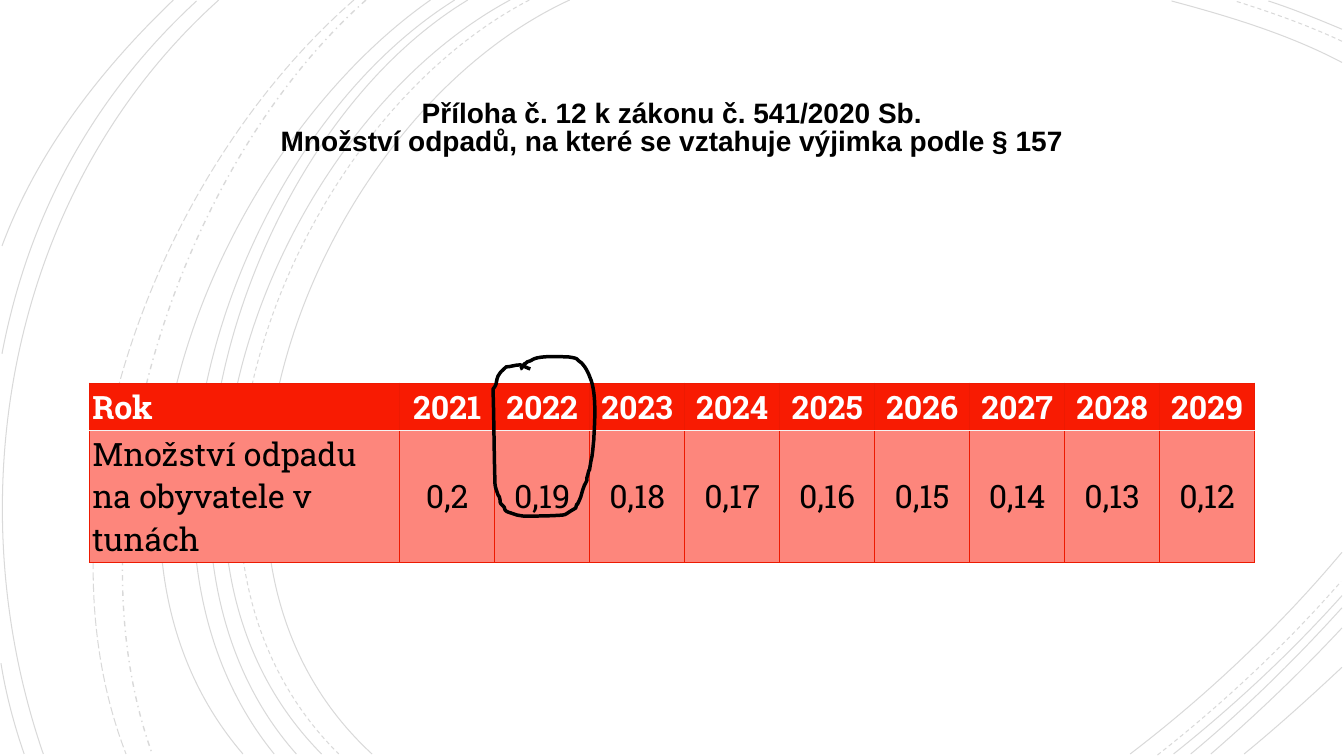
from lxml import etree
from pptx import Presentation
from pptx import util as u
from pptx.dml.color import RGBColor
from pptx.enum import dml, text
from pptx.oxml.ns import qn

# All lengths are cells of a grid of 1333 columns by 750 rows
CELL = u.Inches(0.01)
COLS, ROWS = 1333, 750

BLACK, WHITE = "000000", "FFFFFF"
RED, DARK_RED, LIGHT_RED, PALE = "F81B02", "ED1A02", "FD867C", "F4F4F4"

# Each arc: start, two control points, end
SOLID_ARCS = [
    (565, 0, 315, 115, 143, 540, 369, 748),
    (506, 0, 270, 127, 110, 537, 319, 748),
    (464, 0, 244, 133, 110, 541, 294, 748),
    (451, 0, 231, 138, 97, 533, 272, 748),
    (427, 0, 217, 147, 53, 529, 241, 748),
    (217, 0, 11, 185, -46, 490, 43, 748),
    (195, 1, 92, 96, 28, 214, 2, 351),
    (172, 0, 100, 69, 37, 150, 2, 244),
    (1, 658, 6, 689, 14, 719, 24, 748),
    (1331, 62, 1278, 34, 1218, 16, 1162, 1),
    (1331, 29, 1307, 19, 1283, 9, 1258, 1),
    (1121, 748, 1197, 690, 1269, 622, 1331, 548),
    (1164, 748, 1223, 701, 1280, 648, 1331, 591),
    (1181, 748, 1234, 704, 1284, 655, 1331, 603),
    (1201, 748, 1246, 709, 1290, 667, 1331, 623),
    (1234, 748, 1267, 721, 1299, 692, 1331, 662),
]
DASHED_ARCS = [
    (525, 0, 285, 125, 123, 537, 336, 748),
    (1331, 41, 1297, 25, 1260, 12, 1225, 1),
    (1148, 749, 1213, 698, 1275, 640, 1330, 577),
]
DASH_DOT_ARCS = [(363, 0, 176, 166, 65, 509, 151, 748)]
LONG_DASH_ARCS = [(351, 0, 157, 169, 29, 499, 125, 748)]

# Start, then two control points and an end for every curve
PEN_RING = (
    526, 366, 525, 366, 517, 362, 516, 362, 511, 362, 506, 364, 502, 364,
    496, 370, 498, 367, 494, 373, 494, 374, 493, 375, 493, 376,
    493, 378, 493, 379, 492, 381, 492, 383, 490, 384, 489, 386,
    490, 417, 490, 448, 491, 480, 491, 483, 493, 488, 494, 491,
    495, 492, 496, 494, 496, 496, 496, 498, 496, 499, 497, 500,
    498, 501, 499, 502, 500, 503, 500, 504, 500, 505, 501, 506,
    502, 507, 503, 508, 504, 508, 506, 509, 508, 509, 510, 510,
    511, 510, 512, 511, 513, 511, 515, 511, 517, 512, 519, 512,
    532, 512, 545, 512, 558, 511, 561, 511, 564, 508, 566, 507,
    568, 506, 569, 505, 571, 504, 574, 493, 569, 510, 576, 493,
    577, 491, 577, 488, 578, 486, 579, 483, 580, 480, 582, 477,
    582, 475, 582, 473, 583, 471, 586, 458, 583, 477, 586, 458,
    588, 451, 588, 444, 589, 436, 589, 428, 593, 391, 585, 374,
    584, 371, 582, 367, 580, 364, 576, 359, 578, 361, 574, 358,
    573, 358, 573, 356, 572, 356, 571, 355, 563, 354, 563, 354,
    553, 354, 543, 353, 533, 355, 530, 355, 529, 357, 526, 358,
    525, 359, 524, 359, 523, 359, 522, 360, 521, 361, 520, 361,
    520, 362, 519, 363, 518, 364, 518, 365, 517, 366, 516, 366,
)

YEARS = [str(year) for year in range(2021, 2030)]
TONNES = ["0,2", "0,19", "0,18", "0,17", "0,16", "0,15", "0,14", "0,13", "0,12"]


def cells(n):
    return u.Emu(round(n * CELL))


def rgb(colour):
    return RGBColor.from_string(colour)


def set_opacity(element, percent):
    for colour in element.iter(qn("a:srgbClr")):
        etree.SubElement(colour, qn("a:alpha"), val=str(percent * 1000))


def bend(sp):
    """Turn every three line segments into one cubic curve."""
    lines = list(sp._element.iter(qn("a:lnTo")))
    for first, second, third in zip(lines[::3], lines[1::3], lines[2::3]):
        outline = first.getparent()
        curve = etree.SubElement(outline, qn("a:cubicBezTo"))
        for line in (first, second, third):
            curve.append(line[0])
            outline.remove(line)


def add_curve(s, lengths, width, dash=None):
    """Draw an open, unfilled black line of cubic curves."""
    start, *rest = [(cells(x), cells(y)) for x, y in zip(lengths[::2], lengths[1::2])]
    builder = s.shapes.build_freeform(*start)
    builder.add_line_segments(rest, close=False)
    sp = builder.convert_to_shape()
    bend(sp)
    sp.shadow.inherit = False
    sp.fill.background()
    sp.line.color.rgb = rgb(BLACK)
    sp.line.width = u.Pt(width)
    if dash:
        sp.line.dash_style = dash
    return sp


def add_background_arcs(s):
    dashes = dml.MSO_LINE
    for arcs, width, dash in [
        (SOLID_ARCS, 0.75, None),
        (DASHED_ARCS, 0.75, dashes.DASH),
        (DASH_DOT_ARCS, 1, dashes.DASH_DOT),
        (LONG_DASH_ARCS, 0.75, dashes.LONG_DASH),
    ]:
        for arc in arcs:
            set_opacity(add_curve(s, arc, width, dash)._element, 15)


def format_paragraph(p, align, font, size, colour, bold):
    p.alignment = align
    for r in p.runs:
        r.font.name = font
        r.font.size = u.Pt(size)
        r.font.bold = bold
        r.font.color.rgb = rgb(colour)


def add_title(s, title):
    sp = s.shapes.add_textbox(cells(192), cells(87), cells(949), cells(115))
    tf = sp.text_frame
    tf.word_wrap = True
    tf.vertical_anchor = text.MSO_ANCHOR.MIDDLE
    tf.margin_left = tf.margin_right = cells(25)
    tf.margin_top, tf.margin_bottom = 0, cells(33)
    p = tf.paragraphs[0]
    p.text = title
    p.line_spacing = 0.85
    format_paragraph(p, text.PP_ALIGN.CENTER, "Arial", 20, BLACK, True)


def set_border(cell, side, colour, width):
    ln = etree.SubElement(cell._tc.get_or_add_tcPr(), qn("a:ln" + side),
                          w=str(u.Pt(width)))
    fill = etree.SubElement(ln, qn("a:solidFill"))
    etree.SubElement(fill, qn("a:srgbClr"), val=colour)


def format_cell(cell, is_header, is_label):
    cell.margin_left = cell.margin_right = cells(3)
    cell.margin_top = cell.margin_bottom = cells(2)
    cell.vertical_anchor = text.MSO_ANCHOR.MIDDLE
    for side in "LRTB":
        if side == ("B" if is_header else "T"):
            set_border(cell, side, PALE, 1.25)
        else:
            set_border(cell, side, DARK_RED, 0.75)
    cell.fill.solid()
    cell.fill.fore_color.rgb = rgb(RED if is_header else LIGHT_RED)
    align = text.PP_ALIGN.LEFT if is_label else text.PP_ALIGN.CENTER
    format_paragraph(cell.text_frame.paragraphs[0], align, "Roboto Slab", 23,
                     WHITE if is_header else BLACK, is_header)


def add_waste_table(s, rows):
    width, label_width, heights = 1156, 308, (47, 131)
    table = s.shapes.add_table(len(rows), len(rows[0]), cells(88.5), cells(380),
                               cells(width), cells(sum(heights))).table
    table.horz_banding = False
    for j, column in enumerate(table.columns):
        column.width = cells((width - label_width) / len(YEARS) if j else label_width)
    for i, row in enumerate(rows):
        table.rows[i].height = cells(heights[i])
        for j, value in enumerate(row):
            cell = table.cell(i, j)
            cell.text = value
            format_cell(cell, i == 0, j == 0)


def main():
    prs = Presentation()
    prs.slide_width, prs.slide_height = cells(COLS), cells(ROWS)
    s = prs.slides.add_slide(prs.slide_layouts[6])
    s.background.fill.solid()
    s.background.fill.fore_color.rgb = rgb(WHITE)
    add_background_arcs(s)
    add_title(s, "Příloha č. 12 k zákonu č. 541/2020 Sb.\v"
                 "Množství odpadů, na které se vztahuje výjimka podle § 157")
    add_waste_table(s, [["Rok"] + YEARS,
                        ["Množství odpadu na obyvatele v tunách"] + TONNES])
    add_curve(s, PEN_RING, 2.5)
    prs.save("out.pptx")


if __name__ == "__main__":
    main()
